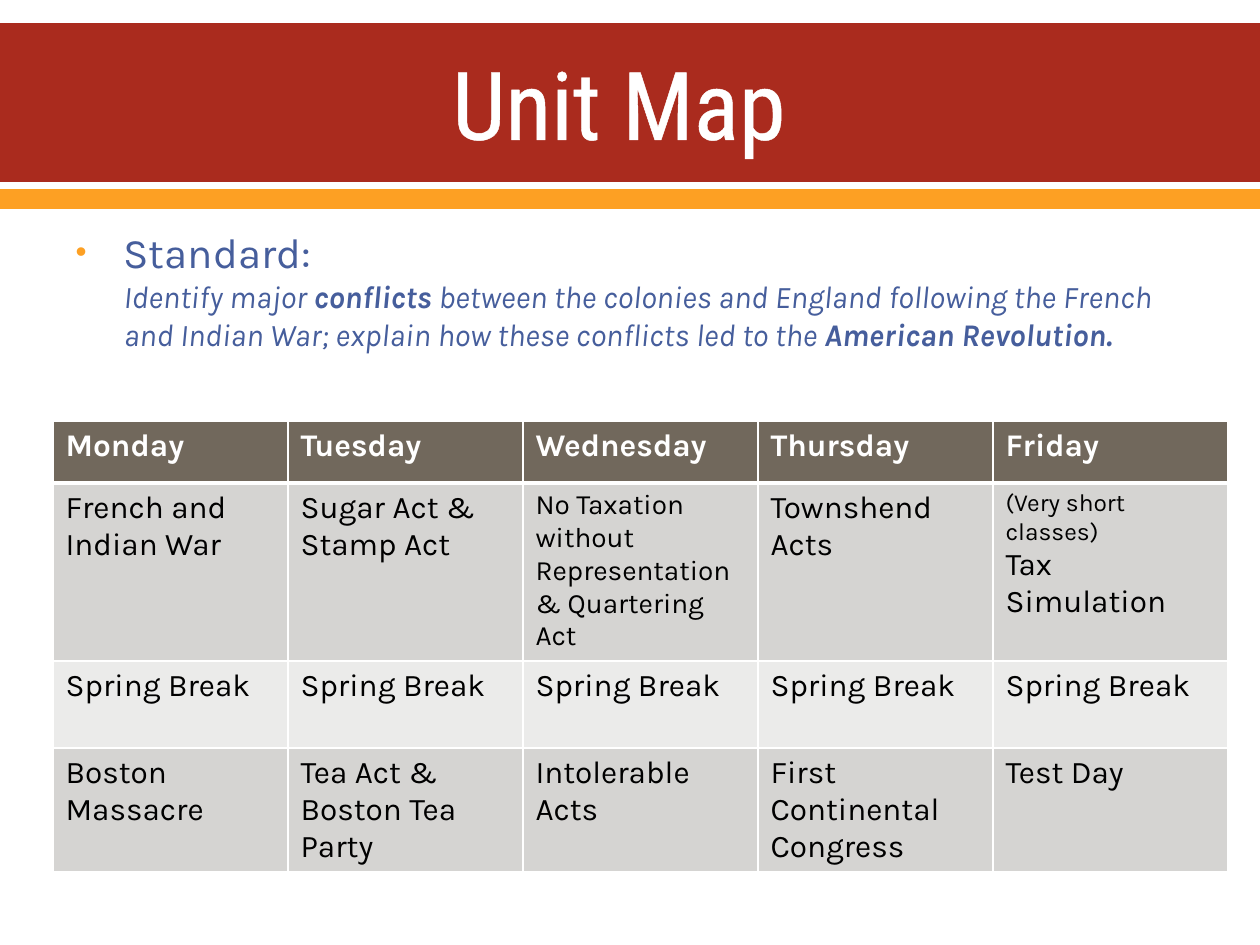
"""Build the Unit Map slide: a banner title, the standard and a week-by-week table."""
from lxml.etree import SubElement
from pptx import Presentation
from pptx.dml.color import RGBColor
from pptx.enum.shapes import MSO_SHAPE
from pptx.enum.text import MSO_ANCHOR, MSO_AUTO_SIZE, PP_ALIGN
from pptx.oxml import parse_xml
from pptx.oxml.ns import nsdecls, qn
from pptx.util import Pt

WHITE = RGBColor(0xFF, 0xFF, 0xFF)
BLACK = RGBColor(0, 0, 0)
RED = RGBColor(0xAA, 0x2B, 0x1E)
ORANGE = RGBColor(0xFD, 0xA0, 0x23)
BLUE = RGBColor(0x46, 0x5E, 0x9C)
BROWN = RGBColor(0x71, 0x68, 0x5C)
GREY = RGBColor(0xD5, 0xD4, 0xD2)
PALE = RGBColor(0xEB, 0xEB, 0xEA)
TITLE_FONT, BODY_FONT = "Roboto Condensed", "Karla"

TITLE = "Unit Map "
BANDS = [((0, 23, 1260, 159), RED), ((0, 189, 1260, 20), ORANGE)]
HEADING = "Standard:"
STANDARD = [
    ("Identify major ", False),
    ("conflicts", True),
    (" between the colonies and England following the French and Indian War; "
     "explain how these conflicts led to the ", False),
    ("American Revolution.", True),
]
DAYS = ["Monday", "Tuesday", "Wednesday", "Thursday", "Friday"]
WEEKS = [
    ["French and Indian War", "Sugar Act & Stamp Act",
     [("No Taxation without Representation & Quartering Act", 16)],
     "Townshend Acts", [("(Very short classes)", 14), ("Tax Simulation", 18)]],
    ["Spring Break"] * len(DAYS),
    ["Boston Massacre", "Tea Act & Boston Tea Party", "Intolerable Acts",
     "First Continental Congress", "Test Day"],
]
ROW_FILLS = [BROWN, GREY, PALE, GREY]
ROW_HEIGHTS = [62, 178, 87, 123]
COLUMN_WIDTH = 235
SCALE = 914400 / 126


def px(length):
    return round(length * SCALE)


def place(shape, left, top, width, height):
    shape.left, shape.top = px(left), px(top)
    shape.width, shape.height = px(width), px(height)


def add_run(paragraph, text, size, color, font=BODY_FONT, bold=False, italic=False):
    run = paragraph.add_run()
    run.text = text
    run.font.name, run.font.size = font, Pt(size)
    run.font.bold, run.font.italic = bold, italic
    run.font.color.rgb = color
    return run


def white_line(tag, points):
    return parse_xml(
        f'<a:{tag} {nsdecls("a")} w="{Pt(points)}"><a:solidFill>'
        f'<a:srgbClr val="{WHITE}"/></a:solidFill></a:{tag}>')


def add_bands(slide):
    for index, (box, color) in enumerate(BANDS):
        band = slide.shapes.add_shape(MSO_SHAPE.RECTANGLE, *map(px, box))
        band.shadow.inherit = False
        band.fill.solid()
        band.fill.fore_color.rgb = color
        band.line.fill.background()
        slide.shapes._spTree.insert(2 + index, band._element)


def fill_title(title):
    place(title, 63, 25, 1134, 154)
    title.text_frame.auto_size = MSO_AUTO_SIZE.NONE
    title.text_frame.vertical_anchor = MSO_ANCHOR.MIDDLE
    paragraph = title.text_frame.paragraphs[0]
    paragraph.alignment = PP_ALIGN.CENTER
    run = add_run(paragraph, TITLE, 54, WHITE, TITLE_FONT)
    run._r.get_or_add_rPr().insert(0, white_line("ln", 1.1))


def fill_standard(body):
    place(body, 63, 220, 1134, 624)
    body.text_frame.auto_size = MSO_AUTO_SIZE.NONE
    paragraph = body.text_frame.paragraphs[0]
    properties = paragraph._p.get_or_add_pPr()
    properties.set("marL", str(px(48)))
    properties.set("indent", str(px(-48)))
    bullet_color = SubElement(properties, qn("a:buClr"))
    SubElement(bullet_color, qn("a:srgbClr"), val=str(ORANGE))
    SubElement(properties, qn("a:buSzPct"), val="75000")
    SubElement(properties, qn("a:buChar"), char="•")
    add_run(paragraph, HEADING, 24, BLUE)
    paragraph.add_line_break()
    for text, bold in STANDARD:
        add_run(paragraph, text, 18, BLUE, bold=bold, italic=True)


def fill_cell(cell, content, fill, header):
    cell.fill.solid()
    cell.fill.fore_color.rgb = fill
    for index, tag in enumerate(["lnL", "lnR", "lnT", "lnB"]):
        points = 3 if header and tag == "lnB" else 1
        cell._tc.get_or_add_tcPr().insert(index, white_line(tag, points))
    lines = [(content, 18)] if isinstance(content, str) else content
    frame = cell.text_frame
    for index, (text, size) in enumerate(lines):
        paragraph = frame.add_paragraph() if index else frame.paragraphs[0]
        add_run(paragraph, text, size, WHITE if header else BLACK, bold=header)


def add_unit_table(slide):
    rows = [DAYS, *WEEKS]
    table = slide.shapes.add_table(
        len(rows), len(DAYS), px(53), px(421),
        px(COLUMN_WIDTH * len(DAYS)), px(sum(ROW_HEIGHTS))).table
    for column in table.columns:
        column.width = px(COLUMN_WIDTH)
    for r, (row, height, fill) in enumerate(zip(rows, ROW_HEIGHTS, ROW_FILLS)):
        table.rows[r].height = px(height)
        for c, content in enumerate(row):
            fill_cell(table.cell(r, c), content, fill, header=r == 0)


def main():
    deck = Presentation()
    deck.slide_width, deck.slide_height = px(1260), px(945)
    slide = deck.slides.add_slide(deck.slide_layouts[1])
    add_bands(slide)
    fill_title(slide.shapes.title)
    fill_standard(slide.placeholders[1])
    add_unit_table(slide)
    deck.save("out.pptx")


if __name__ == "__main__":
    main()
